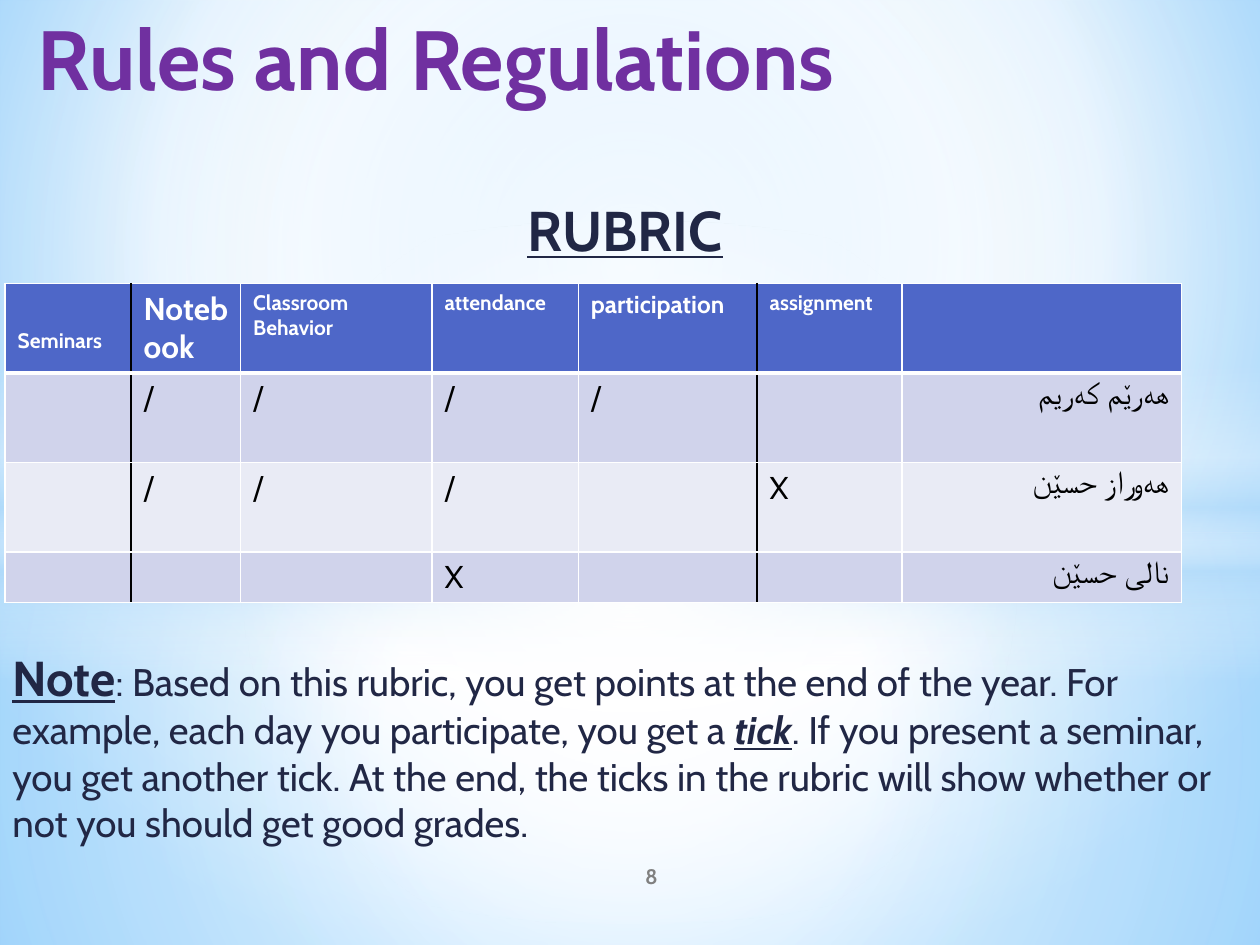
"""Build the rules and regulations slide with its grading rubric."""
from lxml.etree import SubElement as Sub
from pptx import Presentation
from pptx.dml.color import RGBColor as RGB
from pptx.enum.shapes import MSO_SHAPE as Kind
from pptx.enum.text import MSO_ANCHOR as Anchor, PP_ALIGN as Align
from pptx.oxml.ns import qn
from pptx.util import Inches, Pt

FONT = "Cabin"
NAVY = RGB(0x21, 0x27, 0x45)
PURPLE = RGB(0x70, 0x30, 0xA0)
GRAY = RGB(0x80, 0x80, 0x80)
WHITE = RGB(255, 255, 255)
BLACK = RGB(0, 0, 0)
BLUE = RGB(0x4E, 0x67, 0xC8)
BANDS = [RGB(0xD0, 0xD3, 0xEB), RGB(0xE9, 0xEB, 0xF5)]
SKY = RGB(0xB4, 0xDC, 0xFA)
LIGHT = RGB(0x9E, 0xD5, 0xFF)
DEEP = RGB(0x5B, 0xB9, 0xFF)

MID = (50, 50, 50, 50)
BACK = [(0, LIGHT, 100), (60, WHITE, 100), (100, DEEP, 100)]
LAYERS = [
    (Kind.RECTANGLE, 4.23, 3.27, [(0, WHITE, 91), (37, WHITE, 76), (100, SKY, 79)], MID),
    (Kind.RECTANGLE, 0, 4.23, [(0, WHITE, 89), (48, WHITE, 62), (100, SKY, 79)], MID),
    (Kind.RECTANGLE, 2.9, 2.5, [(0, WHITE, 0), (29, WHITE, 30), (45, SKY, 40),
                                (55, WHITE, 26), (65, SKY, 60), (100, WHITE, 0)], None),
    (Kind.OVAL, 1.75, 5.58, [(0, WHITE, 100), (54, WHITE, 0)], MID),
]
HEADS = [("Seminars", 12), ("Notebook", 18), ("Classroom Behavior", 12), ("attendance", 12),
         ("participation", 14), ("assignment", 12), ("", 18)]
MARKS = [
    ["", "∕", "∕", "∕", "∕", "", "هەرێم کەریم"],
    ["", "∕", "∕", "∕", "", "X", "هەوراز حسێن"],
    ["", "", "", "X", "", "", "نالی حسێن"],
]
COLS = [1, 0.87, 1.52, 1.16, 1.42, 1.15, 2.22]
ROWS = [0.71, 0.71, 0.71, 0.4]
DARK = {1, 5}
NOTE = [
    ("Note", 28, True, False),
    (": Based on this rubric, you get points at the end of the year. For example, "
     "each day you participate, you get a ", 22, False, False),
    ("tick", 22, True, True),
    (". If you present a seminar, you get another tick. At the end, the ticks in the "
     "rubric will show whether or not you should get good grades.", 22, False, False),
]


def shade(fill, root, stops, to):
    fill.gradient()
    grad = root.find(".//" + qn("a:gradFill"))
    for part in list(grad):
        grad.remove(part)
    group = Sub(grad, qn("a:gsLst"))
    for pos, color, alpha in stops:
        stop = Sub(group, qn("a:gs"), pos=str(pos * 1000))
        tint = Sub(stop, qn("a:srgbClr"), val=str(color))
        if alpha < 100:
            Sub(tint, qn("a:alpha"), val=str(alpha * 1000))
    if to:
        ring = Sub(grad, qn("a:path"), path="circle")
        Sub(ring, qn("a:fillToRect"), {k: str(v * 1000) for k, v in zip("ltrb", to)})
    else:
        Sub(grad, qn("a:lin"), ang="5400000", scaled="0")


def style(font, size, color, bold=False):
    font.name, font.size, font.bold = FONT, Pt(size), bold
    font.color.rgb = color


def add_box(slide, *area):
    frame = slide.shapes.add_textbox(*map(Inches, area)).text_frame
    frame.word_wrap = True
    return frame


def edge(cell, side, color, width):
    line = Sub(cell._tc.get_or_add_tcPr(), qn("a:ln" + side), w=str(Pt(width)))
    Sub(Sub(line, qn("a:solidFill")), qn("a:srgbClr"), val=str(color))


def add_rubric(slide):
    area = map(Inches, (0.04, 2.25, sum(COLS), sum(ROWS)))
    table = slide.shapes.add_table(len(ROWS), len(COLS), *area).table
    for col, wide in zip(table.columns, COLS):
        col.width = Inches(wide)
    for row, high in zip(table.rows, ROWS):
        row.height = Inches(high)
    body = [[(mark, 18) for mark in line] for line in MARKS]
    for r, line in enumerate([HEADS] + body):
        for c, (text, size) in enumerate(line):
            cell = table.cell(r, c)
            edge(cell, "L", BLACK if c in DARK else WHITE, 1)
            edge(cell, "R", BLACK if c + 1 in DARK else WHITE, 1)
            edge(cell, "T", WHITE, 3 if r == 1 else 1)
            edge(cell, "B", WHITE, 3 if r == 0 else 1)
            cell.fill.solid()
            cell.fill.fore_color.rgb = BANDS[(r - 1) % 2] if r else BLUE
            para = cell.text_frame.paragraphs[0]
            para.text = text
            style(para.font, size, BLACK if r else WHITE, r == 0)
            if c == len(COLS) - 1:
                para.alignment = Align.RIGHT
    first = table.cell(0, 0)
    first.vertical_anchor = Anchor.BOTTOM
    first.margin_bottom = Inches(0.15)


def add_body(slide):
    frame = add_box(slide, 0, 1, 9.92, 6.42)
    frame.margin_top = Inches(0.55)
    head = frame.paragraphs[0]
    head.text, head.alignment = "RUBRIC", Align.CENTER
    style(head.font, 32, NAVY, True)
    head.font.underline = True
    note = frame.add_paragraph()
    note.space_before = Pt(220)
    for text, size, bold, slant in NOTE:
        run = note.add_run()
        run.text = text
        style(run.font, size, NAVY, bold)
        run.font.underline, run.font.italic = bold, slant


def main():
    deck = Presentation()
    deck.slide_width, deck.slide_height = Inches(10), Inches(7.5)
    slide = deck.slides.add_slide(deck.slide_layouts[6])
    shade(slide.background.fill, slide.element, BACK, (20, 10, 20, 60))
    for kind, top, high, stops, to in LAYERS:
        shape = slide.shapes.add_shape(kind, 0, Inches(top), Inches(10), Inches(high))
        shape.shadow.inherit = False
        shape.line.fill.background()
        shade(shape.fill, shape.element, stops, to)
    add_body(slide)
    frame = add_box(slide, 0, 0, 9.92, 1.08)
    frame.margin_left = Inches(0.3)
    title = frame.paragraphs[0]
    title.text = "Rules and Regulations"
    style(title.font, 48, PURPLE, True)
    frame = add_box(slide, 4.17, 6.75, 2, 0.4)
    frame.vertical_anchor = Anchor.MIDDLE
    page = frame.paragraphs[0]
    page.text, page.alignment = "8", Align.CENTER
    style(page.font, 12, GRAY, True)
    add_rubric(slide)
    deck.save("out.pptx")


if __name__ == "__main__":
    main()
